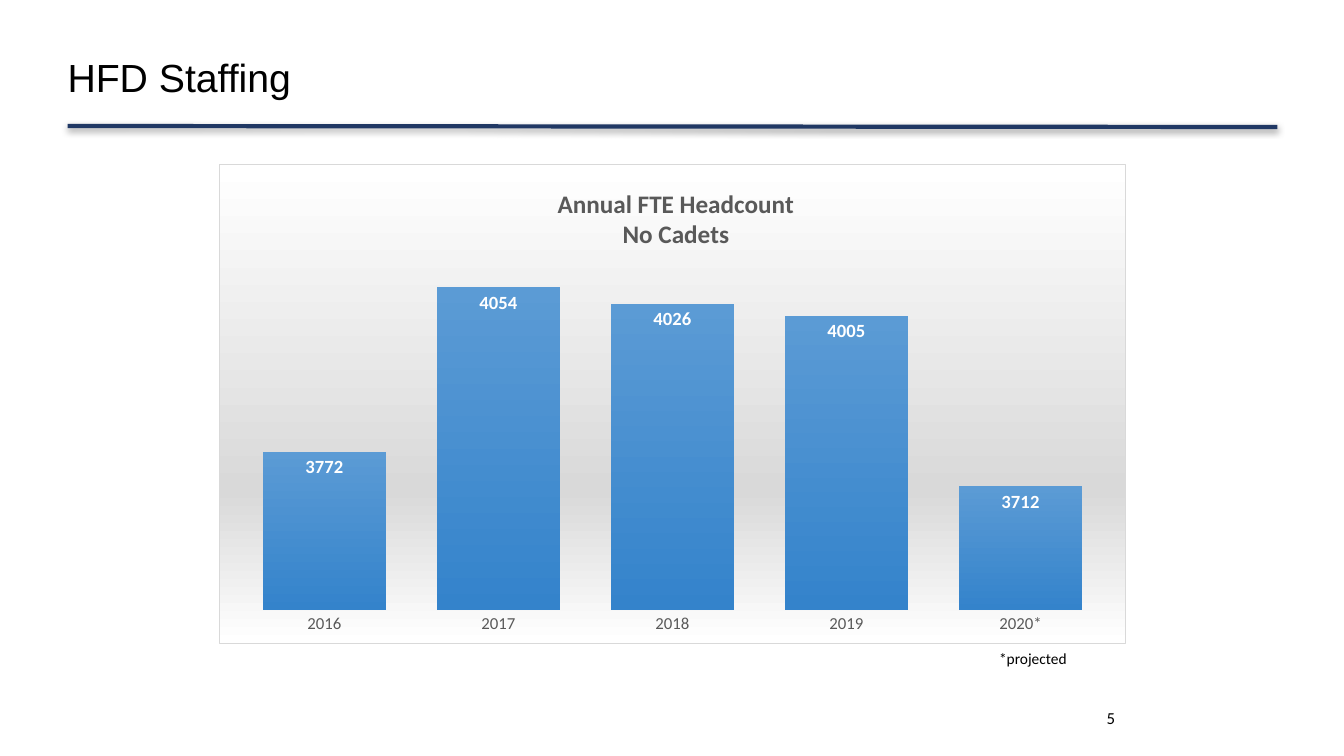
from dataclasses import dataclass
from typing import Any

from lxml import etree
from pptx import Presentation
from pptx.chart.chart import Chart
from pptx.chart.data import CategoryChartData
from pptx.dml.color import RGBColor
from pptx.enum.chart import XL_CHART_TYPE, XL_LABEL_POSITION, XL_TICK_MARK
from pptx.enum.shapes import MSO_CONNECTOR
from pptx.enum.text import MSO_ANCHOR, PP_ALIGN
from pptx.oxml import parse_xml
from pptx.oxml.ns import nsdecls, qn
from pptx.slide import Slide
from pptx.util import Inches, Pt

COLUMNS = XL_CHART_TYPE.COLUMN_CLUSTERED
INSIDE_END = XL_LABEL_POSITION.INSIDE_END
NO_TICKS = XL_TICK_MARK.NONE
STRAIGHT = MSO_CONNECTOR.STRAIGHT
TOP, MIDDLE = MSO_ANCHOR.TOP, MSO_ANCHOR.MIDDLE
LEFT, RIGHT = PP_ALIGN.LEFT, PP_ALIGN.RIGHT

Stops = tuple[tuple[int, str], ...]


@dataclass(frozen=True)
class Theme:
    heading_font: str = "Arial"
    body_font: str = "Calibri"
    ink: str = "000000"
    grey: str = "595959"
    white: str = "FFFFFF"
    rule: str = "203864"
    border: str = "D9D9D9"
    panel: Stops = ((0, "FFFFFF"), (68, "D9D9D9"), (100, "FFFFFF"))
    bars: Stops = ((0, "5B9BD5"), (100, "3483CB"))
    title_size: float = 28
    chart_title_size: float = 18
    label_size: float = 13.3
    text_size: float = 12
    note_size: float = 11


THEME = Theme()
HEADCOUNT = {"2016": 3772, "2017": 4054, "2018": 4026, "2019": 4005, "2020*": 3712}


@dataclass(frozen=True)
class Label:
    text: str
    left: float
    top: float
    width: float
    height: float
    size: float
    font: str = THEME.body_font
    align: Any = LEFT
    anchor: Any = TOP
    wrap: bool = True
    margin: tuple[float, float] = (0.1, 0.05)
    spacing: float = 1.0


LABELS = (
    Label("HFD Staffing", 0.67, 0.33, 9.15, 0.92, THEME.title_size,
          THEME.heading_font, anchor=MIDDLE, margin=(0, 0), spacing=0.9),
    Label("5", 8.83, 6.97, 2.33, 0.4, THEME.text_size, align=RIGHT),
    Label("*projected", 9.81, 6.39, 0.88, 0.29, THEME.note_size, wrap=False),
)


def apply(target: Any, values: dict[str, Any]) -> None:
    for name, value in values.items():
        setattr(target, name, value)


def style_font(font: Any, size: float, color: str, bold: bool = False,
               name: str = THEME.body_font) -> None:
    apply(font, {"name": name, "size": Pt(size), "bold": bold})
    font.color.rgb = RGBColor.from_string(color)


def add_label(page: Slide, label: Label) -> None:
    box = page.shapes.add_textbox(Inches(label.left), Inches(label.top),
                                  Inches(label.width), Inches(label.height))
    side, end = map(Inches, label.margin)
    apply(box.text_frame, {
        "word_wrap": label.wrap, "vertical_anchor": label.anchor,
        "margin_left": side, "margin_right": side,
        "margin_top": end, "margin_bottom": end,
    })
    para = box.text_frame.paragraphs[0]
    apply(para, {"alignment": label.align, "line_spacing": label.spacing})
    span = para.add_run()
    span.text = label.text
    style_font(span.font, label.size, THEME.ink, name=label.font)


def add_rule(page: Slide) -> None:
    rule = page.shapes.add_connector(STRAIGHT, Inches(0.67), Inches(1.25),
                                     Inches(12.67), Inches(1.26))
    rule.line.width = Pt(3)
    rule.line.color.rgb = RGBColor.from_string(THEME.rule)
    rule.element.spPr.append(parse_xml(
        f'<a:effectLst {nsdecls("a")}>'
        f'<a:outerShdw blurRad="{Pt(5)}" dist="{Pt(1.6)}" dir="5400000" rotWithShape="0">'
        f'<a:srgbClr val="{THEME.ink}"><a:alpha val="38000"/></a:srgbClr>'
        '</a:outerShdw></a:effectLst>'))


def gradient(stops: Stops) -> etree._Element:
    """Return a gradient fill that runs from top to bottom."""
    marks = "".join(f'<a:gs pos="{place * 1000}"><a:srgbClr val="{color}"/></a:gs>'
                    for place, color in stops)
    return parse_xml(f'<a:gradFill {nsdecls("a")}><a:gsLst>{marks}</a:gsLst>'
                     '<a:lin ang="5400000" scaled="0"/></a:gradFill>')


def place(part: etree._Element, index: int, **fractions: float) -> None:
    """Fix a chart part at fractions of the chart's width and height."""
    for layout in part.findall(qn("c:layout")):
        part.remove(layout)
    target = '<c:layoutTarget val="inner"/>' if "w" in fractions else ""
    modes = '<c:xMode val="edge"/><c:yMode val="edge"/>'
    sizes = "".join(f'<c:{key} val="{value}"/>' for key, value in fractions.items())
    part.insert(index, parse_xml(
        f'<c:layout {nsdecls("c")}><c:manualLayout>{target}{modes}{sizes}'
        '</c:manualLayout></c:layout>'))


def style_title(chart: Chart) -> None:
    chart.has_title = True
    chart.chart_title.include_in_layout = False
    frame = chart.chart_title.text_frame
    frame.text = "Annual FTE Headcount\nNo Cadets"
    for para in frame.paragraphs:
        style_font(para.font, THEME.chart_title_size, THEME.grey, bold=True)
        style_font(para.runs[0].font, THEME.chart_title_size, THEME.grey, bold=True)
    place(chart.element.xpath("c:chart/c:title")[0], 1, x=0.37, y=0.04)


def style_axes(chart: Chart) -> None:
    apply(chart.value_axis, {"minimum_scale": 3500, "maximum_scale": 4100,
                             "has_major_gridlines": False, "visible": False})
    years = chart.category_axis
    apply(years, {"major_tick_mark": NO_TICKS, "minor_tick_mark": NO_TICKS,
                  "has_major_gridlines": False})
    years.format.line.fill.background()
    style_font(years.tick_labels.font, THEME.text_size, THEME.grey)


def style_columns(chart: Chart) -> None:
    plot = chart.plots[0]
    apply(plot, {"gap_width": 41, "vary_by_categories": False, "has_data_labels": True})
    apply(plot.data_labels, {"show_value": True, "position": INSIDE_END})
    style_font(plot.data_labels.font, THEME.label_size, THEME.white, bold=True)
    columns = plot.series[0]
    columns.invert_if_negative = False
    columns.format.line.fill.background()
    chart.element.xpath(".//c:ser/c:spPr")[0].insert(0, gradient(THEME.bars))


def style_panel(chart: Chart) -> None:
    panel = parse_xml(
        f'<c:spPr {nsdecls("c", "a")}><a:ln w="{Pt(0.75)}"><a:solidFill>'
        f'<a:srgbClr val="{THEME.border}"/></a:solidFill></a:ln></c:spPr>')
    panel.insert(0, gradient(THEME.panel))
    chart.element.find(qn("c:chart")).addnext(panel)


def add_headcount_chart(page: Slide) -> None:
    data = CategoryChartData()
    data.categories = list(HEADCOUNT)
    data.add_series("Series 1", HEADCOUNT.values())
    chart = page.shapes.add_chart(COLUMNS, Inches(2.17), Inches(1.63), Inches(9),
                                  Inches(4.76), data).chart
    chart.has_legend = False
    style_font(chart.font, 10, THEME.ink)
    style_title(chart)
    style_axes(chart)
    style_columns(chart)
    style_panel(chart)
    place(chart.element.xpath("c:chart/c:plotArea")[0], 0, x=0.02, y=0.2, w=0.96, h=0.73)


def main() -> None:
    deck = Presentation()
    apply(deck, {"slide_width": Inches(13.33), "slide_height": Inches(7.5)})
    page = deck.slides.add_slide(deck.slide_layouts[6])
    add_rule(page)
    add_headcount_chart(page)
    for label in LABELS:
        add_label(page, label)
    deck.save("out.pptx")


if __name__ == "__main__":
    main()
